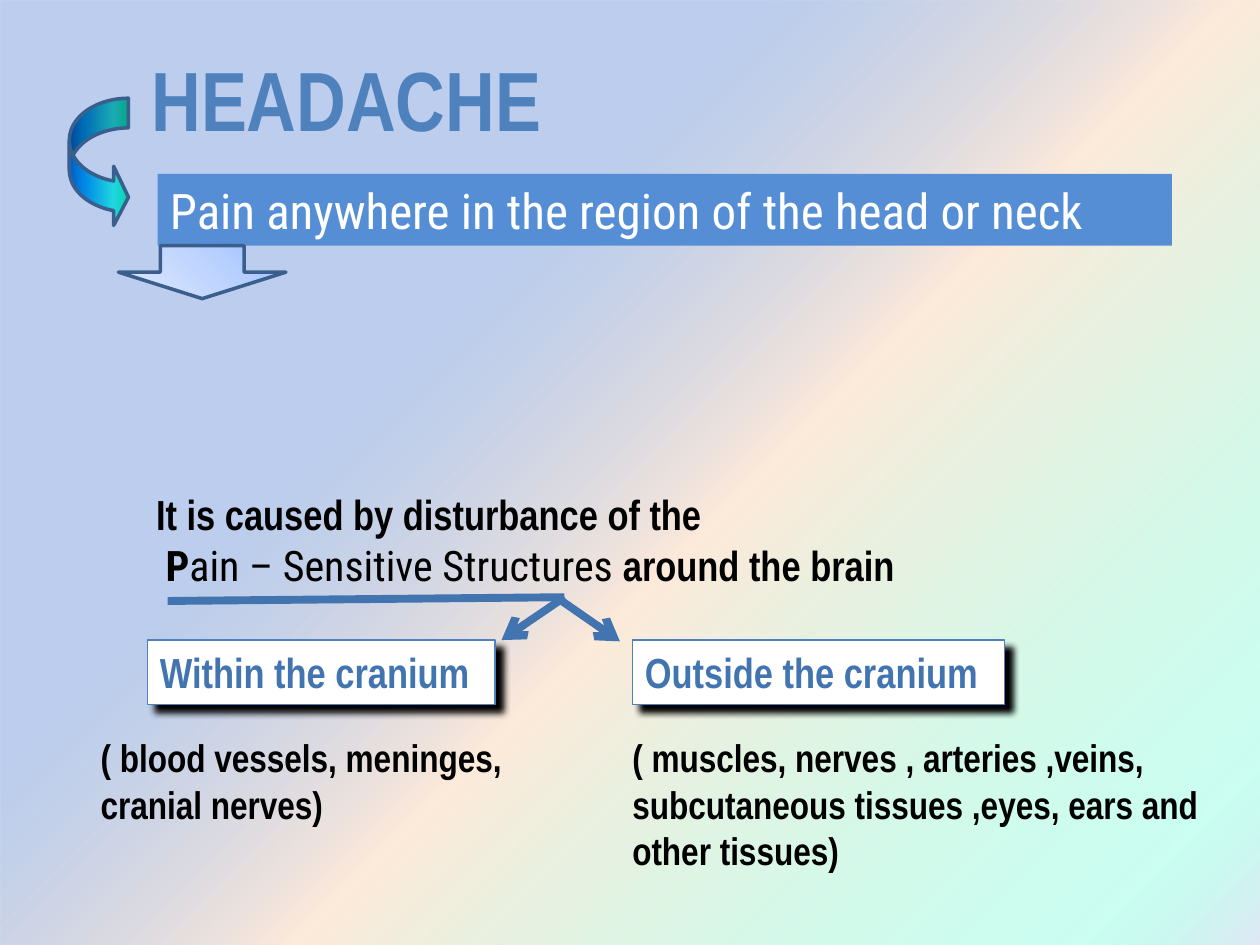
from dataclasses import dataclass

import pptx
import pptx.dml.color
import pptx.enum.shapes
import pptx.enum.text
import pptx.oxml
import pptx.oxml.ns
import pptx.util

SHAPES = pptx.enum.shapes.MSO_SHAPE
ALIGN = pptx.enum.text.PP_ALIGN
NAMESPACE = pptx.oxml.ns.nsdecls("a")
COLUMNS, ROWS = 100, 75  # square grid cells over the slide


@dataclass(frozen=True)
class Theme:
    heading_font: str = "Arial Narrow"
    accent_font: str = "Roboto Condensed"
    title_size: int = 48
    banner_size: int = 28
    body_size: int = 24
    detail_size: int = 22
    black: str = "000000"
    white: str = "FFFFFF"
    title: str = "4F81BD"
    banner: str = "558ED5"
    accent: str = "4274B0"
    arrow_outline: str = "3A5F8C"
    # Gradient stops: position %, colour, opacity %
    backdrop: tuple = ((35, "9AB5E4", 66), (56, "FDEADA", 100),
                       (92, "A3FFE7", 56), (100, "E1E8F5", 100))
    teal: tuple = ((0, "03D4A8", 100), (25, "21D6E0", 100),
                   (75, "0087E6", 100), (100, "005CBF", 100))
    pale_blue: tuple = ((0, "9ABFFF", 100), (50, "C1D6FF", 100), (100, "E1EAFF", 100))


def rgb(color):
    return pptx.dml.color.RGBColor.from_string(color)


def write_text(frame, paragraphs, align=ALIGN.LEFT, wrap=True, **font):
    """Fill a frame; each paragraph is a list of (text, font overrides)."""
    frame.word_wrap = wrap
    frame.auto_size = pptx.enum.text.MSO_AUTO_SIZE.SHAPE_TO_FIT_TEXT
    frame.vertical_anchor = pptx.enum.text.MSO_ANCHOR.TOP
    for index, runs in enumerate(paragraphs):
        paragraph = frame.add_paragraph() if index else frame.paragraphs[0]
        paragraph.alignment = align
        for text, overrides in runs:
            style = {**font, **overrides}
            run = paragraph.add_run()
            run.text = text
            run.font.name = style["name"]
            run.font.size = pptx.util.Pt(style["size"])
            run.font.bold = style.get("bold", False)
            run.font.color.rgb = rgb(style["color"])


class SlideBuilder:
    def __init__(self, presentation, theme):
        self.theme = theme
        self.slide = presentation.slides.add_slide(presentation.slide_layouts[6])
        self.column = presentation.slide_width / COLUMNS
        self.row = presentation.slide_height / ROWS

    def place(self, x, y):
        return round(x * self.column), round(y * self.row)

    def text(self, box, paragraphs, **style):
        text_box = self.slide.shapes.add_textbox(*self.place(*box[:2]), *self.place(*box[2:]))
        write_text(text_box.text_frame, paragraphs, **style)

    def shape(self, kind, box, fill, outline=None, width=2):
        shape = self.slide.shapes.add_shape(kind, *self.place(*box[:2]), *self.place(*box[2:]))
        shape.shadow.inherit = False
        shape.fill.solid()
        shape.fill.fore_color.rgb = rgb(fill)
        if outline:
            shape.line.color.rgb = rgb(outline)
            shape.line.width = pptx.util.Pt(width)
        else:
            shape.line.fill.background()
        return shape

    def gradient_shape(self, kind, box, stops, angle, outline=None):
        shape = self.shape(kind, box, self.theme.white, outline)
        stop_xml = "".join(
            f'<a:gs pos="{position * 1000}"><a:srgbClr val="{color}">'
            f'<a:alpha val="{opacity * 1000}"/></a:srgbClr></a:gs>'
            for position, color, opacity in stops)
        gradient = pptx.oxml.parse_xml(
            f'<a:gradFill {NAMESPACE} rotWithShape="1"><a:gsLst>{stop_xml}</a:gsLst>'
            f'<a:lin ang="{angle * 60000}" scaled="0"/></a:gradFill>')
        properties = shape.element.spPr
        properties.replace(properties.find(pptx.oxml.ns.qn("a:solidFill")), gradient)
        return shape

    def label(self, box, text):
        theme = self.theme
        shape = self.shape(SHAPES.RECTANGLE, box, theme.white, theme.title, 0.75)
        effects = shape.element.spPr.find(pptx.oxml.ns.qn("a:effectLst"))
        effects.append(pptx.oxml.parse_xml(
            f'<a:outerShdw {NAMESPACE} blurRad="{pptx.util.Pt(4)}" dist="{pptx.util.Pt(6)}" '
            f'dir="2700000" algn="tl" rotWithShape="0"><a:srgbClr val="{theme.black}"/>'
            '</a:outerShdw>'))
        write_text(shape.text_frame, [[(text, {})]], wrap=False, name=theme.heading_font,
                   size=theme.body_size, color=theme.accent, bold=True)

    def line(self, start, end, arrow=False):
        line = self.slide.shapes.add_connector(
            pptx.enum.shapes.MSO_CONNECTOR.STRAIGHT, *self.place(*start), *self.place(*end))
        line.line.color.rgb = rgb(self.theme.accent)
        line.line.width = pptx.util.Pt(4.5)
        if arrow:
            line.line._get_or_add_ln().append(
                pptx.oxml.parse_xml(f'<a:tailEnd {NAMESPACE} type="arrow"/>'))
        line.element.spPr.append(pptx.oxml.parse_xml(f'<a:effectLst {NAMESPACE}/>'))


def main():
    presentation = pptx.Presentation()
    presentation.slide_width = pptx.util.Inches(10)
    presentation.slide_height = pptx.util.Inches(7.5)
    theme = Theme()
    builder = SlideBuilder(presentation, theme)
    body = dict(name=theme.heading_font, size=theme.body_size, color=theme.black, bold=True)

    # Backdrop and title
    builder.gradient_shape(SHAPES.RECTANGLE, (0, 0, COLUMNS, ROWS), theme.backdrop, 45)
    builder.text((10.4, 3.3, 34.2, 9.1), [[("HEADACHE", {})]], align=ALIGN.CENTER,
                 **{**body, "size": theme.title_size, "color": theme.title})

    # Definition banner
    banner = builder.shape(SHAPES.RECTANGLE, (12.5, 13.8, 80.5, 5.7), theme.banner)
    write_text(banner.text_frame, [[("Pain anywhere in the region of the head or neck", {})]],
               name=theme.accent_font, size=theme.banner_size, color=theme.white)

    # Cause
    accent = {"name": theme.accent_font}
    builder.text((11.4, 38.3, 66.7, 9.1), [
        [("It is caused by disturbance of the", {})],
        [(" ", {}), ("P", accent),
         ("ain – Sensitive Structures ", {**accent, "bold": False}),
         ("around the brain", {})],
    ], **body)

    # Block arrows
    curved = builder.gradient_shape(SHAPES.CURVED_RIGHT_ARROW, (5.5, 7.8, 4.7, 10.2),
                                    theme.teal, 180, theme.arrow_outline)
    for index, value in enumerate((0.5, 1, 0.25)):
        curved.adjustments[index] = value
    builder.gradient_shape(SHAPES.DOWN_ARROW, (9.4, 19.5, 13.3, 4.2),
                           theme.pale_blue, 135, theme.arrow_outline)

    # Two groups of structures
    groups = (
        (11.7, 27.6, "Within the cranium",
         (7, 57.8, 34.4, 8.4), "( blood vessels, meninges, cranial nerves)"),
        (50.2, 29.5, "Outside the cranium", (49.2, 57.8, 50, 12.1),
         "( muscles, nerves , arteries ,veins, subcutaneous tissues ,eyes, ears and other tissues)"),
    )
    for left, width, heading, detail_box, detail in groups:
        builder.label((left, 50.8, width, 5.1), heading)
        builder.text(detail_box, [[(detail, {})]], **{**body, "size": theme.detail_size})

    # Underline branching to both groups
    builder.line((13.3, 47.7), (44.8, 47.4))
    builder.line((44.8, 47.4), (39.8, 50.8), arrow=True)
    builder.line((44.3, 47.5), (49.2, 50.9), arrow=True)

    presentation.save("out.pptx")


if __name__ == "__main__":
    main()
